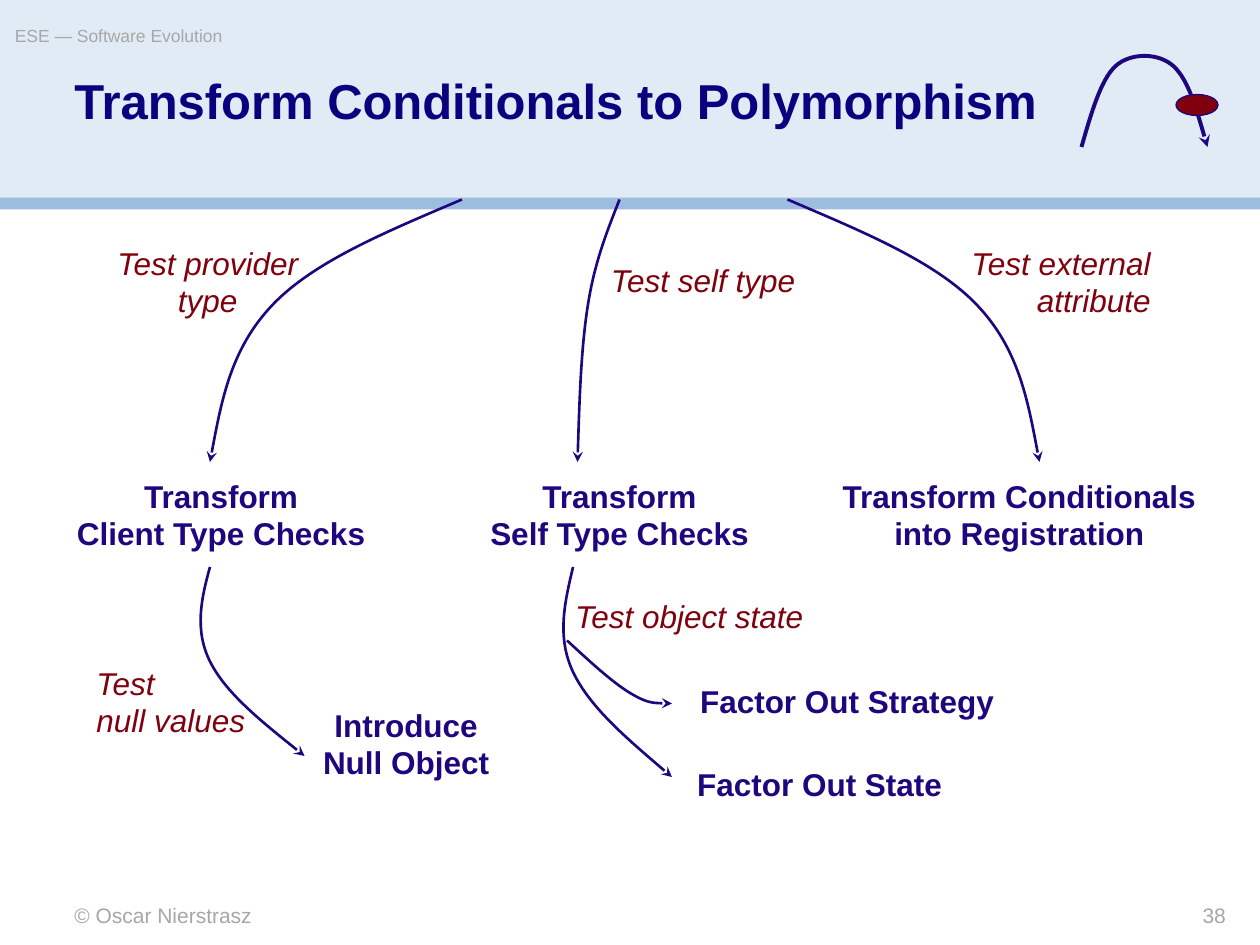
from lxml import etree
from pptx import Presentation
from pptx.dml.color import RGBColor
from pptx.enum.shapes import MSO_SHAPE
from pptx.enum.text import MSO_ANCHOR, MSO_AUTO_SIZE, PP_ALIGN
from pptx.oxml.ns import qn
from pptx.util import Pt

RECT, OVAL = MSO_SHAPE.RECTANGLE, MSO_SHAPE.OVAL
LEFT, MID, RIGHT = PP_ALIGN.LEFT, PP_ALIGN.CENTER, PP_ALIGN.RIGHT
TOP, MIDDLE = MSO_ANCHOR.TOP, MSO_ANCHOR.MIDDLE
GROW, FIXED = MSO_AUTO_SIZE.SHAPE_TO_FIT_TEXT, MSO_AUTO_SIZE.NONE

PALE = RGBColor(0xE1, 0xEB, 0xF5)
BLUE = RGBColor(0x9C, 0xBD, 0xDE)
NAVY = RGBColor(0x1E, 0x06, 0x7F)
DEEP = RGBColor(0x0A, 0x01, 0x7F)
RED = RGBColor(0x7F, 0x01, 0x0D)
GRAY = RGBColor(0xA7, 0xA7, 0xA7)

STEP = {"size": Pt(18), "bold": True}
TEST = {"size": Pt(18), "italic": True}
ONE, TWO = 28.8, 50.4  # heights of one-line and two-line labels

# text, left, top, width, height, alignment; \v breaks a line
STEPS = [
    ("Transform\vSelf Type Checks", 272.4, 268.8, 163.2, TWO, MID),
    ("Transform\vClient Type Checks", 36, 268.8, 180.7, TWO, MID),
    ("Transform Conditionals\ninto Registration", 473.8, 268.8, 217.4, TWO, MID),
    ("Introduce\vNull Object", 177.4, 399.6, 109.4, TWO, MID),
    ("Factor Out Strategy", 393, 386.2, 182.2, ONE, MID),
    ("Factor Out State", 391, 433.7, 154.8, ONE, MID),
]
TESTS = [
    ("Test provider\ntype", 59, 135.6, 119.5, TWO, MID),
    ("Test self type", 342, 145.7, 121.7, ONE, LEFT),
    ("Test external\nattribute", 545.8, 135.6, 118.8, TWO, RIGHT),
    ("Test null values".replace("Test ", "Test\n"), 48, 375.6, 99.4, TWO, LEFT),
    ("Test object state", 321.6, 337.7, 146.2, ONE, LEFT),
]

# The three top arrows share their heights; the right one mirrors the left
DROP = [114, 132, 149, 174, 199, 232, 264]
WIDE = [264, 222, 180, 156, 132, 126, 120]
STEEP = [354, 347, 340, 336, 332, 331, 330]
MIRROR = 714
CURVES = [
    list(zip(STEEP, DROP)),
    list(zip(WIDE, DROP)),
    [(MIRROR - x, y) for x, y in zip(WIDE, DROP)],
    [(120, 324), (115, 342), (111, 360), (120, 378),
     (129, 396), (151.5, 414), (174, 432)],
    [(327.5, 324), (322.75, 344), (318, 364), (327.5, 384),
     (337, 404), (360.5, 424), (384, 444)],
    [(324, 366), (337, 378), (350, 390), (360, 396),
     (370, 402), (377, 402), (384, 402)],
]
HOOK = [(618, 84), (623.5, 65), (629, 45.5), (637.5, 37.75), (646, 30),
        (662, 30), (670.5, 37.75), (679, 45.5), (684.5, 65), (690, 84)]


def add_shape(slide, kind, box, fill, line=None):
    shape = slide.shapes.add_shape(kind, *map(Pt, box))
    shape.shadow.inherit = False
    shape.fill.solid()
    shape.fill.fore_color.rgb = fill
    if line is None:
        shape.line.fill.background()
    else:
        shape.line.color.rgb = line
        shape.line.width = Pt(0.75)


def add_text(slide, text, box, align, color, style, frame):
    """Add a text box; style holds font values, frame holds text frame values."""
    body = slide.shapes.add_textbox(*map(Pt, box)).text_frame
    for name, value in frame.items():
        setattr(body, name, value)
    body.text = text
    for para in body.paragraphs:
        para.alignment = align
        for run in para.runs:
            run.font.name = "Arial"
            run.font.color.rgb = color
            for name, value in style.items():
                setattr(run.font, name, value)
    return body


def add_label(slide, label, color, style):
    text, *box, align = label
    frame = {"word_wrap": False, "auto_size": GROW, "vertical_anchor": MIDDLE}
    add_text(slide, text, box, align, color, style, frame)


def add_plain(slide, text, box, align, color, style):
    """Add text in a fixed box without margins."""
    frame = {"word_wrap": True, "auto_size": FIXED, "vertical_anchor": TOP}
    frame.update({f"margin_{side}": 0 for side in ("left", "top", "right", "bottom")})
    return add_text(slide, text, box, align, color, style, frame)


def add_curve(slide, points, width):
    """Draw a Bezier arrow: a start, then two handles and an end per section."""
    start, *rest = [(Pt(x), Pt(y)) for x, y in points]
    build = slide.shapes.build_freeform(*start)
    build.add_line_segments(rest, close=False)
    shape = build.convert_to_shape()
    shape.shadow.inherit = False
    shape.fill.background()
    shape.line.color.rgb = NAVY
    shape.line.width = Pt(width)

    parts = list(shape.element.iter(qn("a:lnTo")))
    for i in range(0, len(parts), 3):
        bend = etree.SubElement(parts[i].getparent(), qn("a:cubicBezTo"))
        for part in parts[i:i + 3]:
            bend.append(part[0])
            part.getparent().remove(part)
    line = next(shape.element.iter(qn("a:ln")))
    etree.SubElement(line, qn("a:tailEnd"), type="stealth")


def main():
    deck = Presentation()
    deck.slide_width, deck.slide_height = Pt(720), Pt(540)
    slide = deck.slides.add_slide(deck.slide_layouts[6])

    add_shape(slide, RECT, (0, 0, 720, 113.8), PALE)
    add_shape(slide, RECT, (0, 113, 720, 6.75), BLUE)
    small = {"size": Pt(12)}
    add_plain(slide, "© Oscar Nierstrasz", (42.5, 515.5, 300, 14.4), LEFT, GRAY, small)
    add_plain(slide, "38", (594, 516, 106.5, 14.4), RIGHT, GRAY, small)

    for points in CURVES:
        add_curve(slide, points, 1.5)
    for label in STEPS:
        add_label(slide, label, NAVY, STEP)
    for label in TESTS:
        add_label(slide, label, RED, TEST)

    title = add_plain(slide, "Transform Conditionals to Polymorphism",
                      (42.5, 44, 636, 64), LEFT, DEEP, {"size": Pt(28), "bold": True})
    title.paragraphs[0].line_spacing = 0.9
    add_plain(slide, "ESE — Software Evolution", (8.5, 14.4, 425, 20),
              LEFT, GRAY, {"size": Pt(10)})
    add_curve(slide, HOOK, 2.25)
    add_shape(slide, OVAL, (672, 54, 24, 12), RED, NAVY)

    deck.save("out.pptx")


if __name__ == "__main__":
    main()
